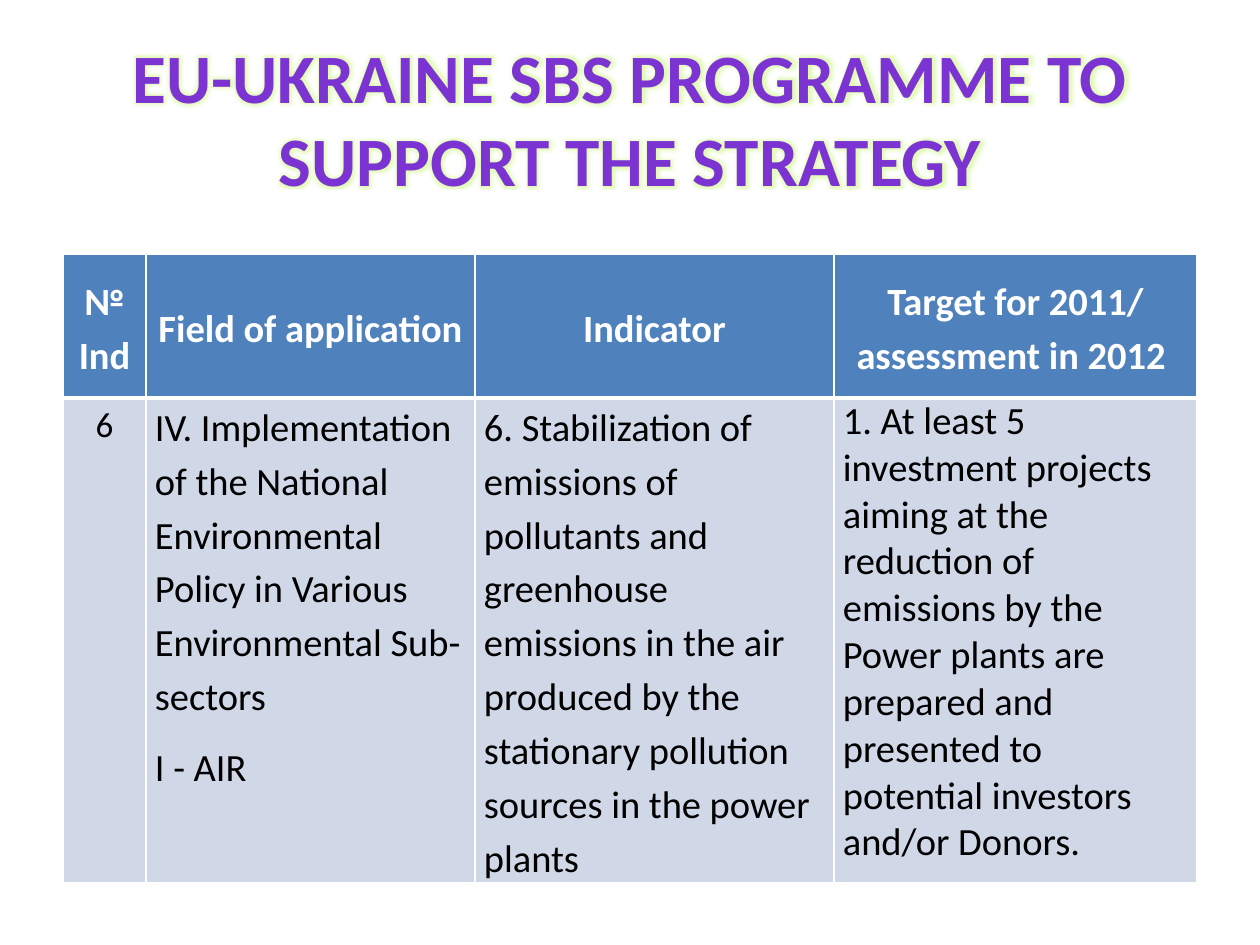
from lxml import etree
from pptx import Presentation
from pptx.dml.color import RGBColor
from pptx.enum.text import MSO_ANCHOR, PP_ALIGN
from pptx.oxml.ns import qn
from pptx.util import Emu, Pt

CENTER, LEFT = PP_ALIGN.CENTER, PP_ALIGN.LEFT
MIDDLE, TOP = MSO_ANCHOR.MIDDLE, MSO_ANCHOR.TOP

PURPLE = RGBColor(0x7B, 0x34, 0xD2)
OUTLINE = RGBColor(0x5E, 0x45, 0x7C)
GLOW = RGBColor(0xB8, 0xF0, 0x50)
BLUE = RGBColor(0x4F, 0x81, 0xBD)
PALE_BLUE = RGBColor(0xD0, 0xD8, 0xE8)
WHITE = RGBColor(0xFF, 0xFF, 0xFF)
BLACK = RGBColor(0x00, 0x00, 0x00)

FONT = "Calibri"
PX_PER_INCH = 126
COLUMNS = [83, 329, 359, 363]
ROWS = [144, 484]

HEADERS = ["№ Ind", "Field of application", "Indicator",
           "Target for 2011/ assessment in 2012 "]
# Paragraphs, alignment, text size, line spacing, space after
DETAILS = [
    (["6"], CENTER, 20, 1.15, 10),
    (["IV. Implementation of the National Environmental Policy in Various "
      "Environmental Sub-sectors", "І - AIR"], LEFT, 22, 1.15, 10),
    (["6. Stabilization of emissions of pollutants and greenhouse emissions in "
      "the air produced by the stationary pollution sources in the power plants"],
     LEFT, 22, 1.15, 10),
    (["1. At least 5 investment projects aiming at the reduction of emissions by "
      "the Power plants are prepared and presented to potential investors and/or "
      "Donors."], LEFT, 22, 1, 0),
]


def px(count):
    return Emu(round(count * 914400 / PX_PER_INCH))


def add_color(parent, color):
    fill = etree.SubElement(parent, qn("a:solidFill"))
    etree.SubElement(fill, qn("a:srgbClr"), val=str(color))


def add_span(para, text, size, color, bold):
    span = para.add_run()
    span.text = text
    span.font.name = FONT
    span.font.size = Pt(size)
    span.font.bold = bold
    span.font.color.rgb = color
    return span


def add_text_effects(span):
    """Give the letters a thin outline and a soft glow."""
    fill = span.font.fill._xPr.find(qn("a:solidFill"))
    line = etree.Element(qn("a:ln"), w=str(Pt(0.71)))
    add_color(line, OUTLINE)
    fill.addprevious(line)
    effects = etree.Element(qn("a:effectLst"))
    glow = etree.SubElement(effects, qn("a:glow"), rad=str(Pt(4)))
    color = etree.SubElement(glow, qn("a:srgbClr"), val=str(GLOW))
    etree.SubElement(color, qn("a:alpha"), val="40000")
    fill.addnext(effects)


def place_title(page, left, top, width, height):
    title = page.shapes.title
    title.left, title.top = px(left), px(top)
    title.width, title.height = px(width), px(height)
    frame = title.text_frame
    frame.word_wrap = True
    frame.vertical_anchor = MIDDLE
    para = frame.paragraphs[0]
    para.alignment = CENTER
    span = add_span(para, "EU-UKRAINE SBS PROGRAMME TO SUPPORT THE STRATEGY",
                    39.6, PURPLE, True)
    add_text_effects(span)


def set_borders(cell, bottom):
    properties = cell._tc.get_or_add_tcPr()
    sides = {"lnL": 1, "lnR": 1, "lnT": 1, "lnB": bottom}
    for index, (side, width) in enumerate(sides.items()):
        line = etree.Element(qn(f"a:{side}"), w=str(Pt(width)))
        add_color(line, WHITE)
        properties.insert(index, line)


def fill_cell(cell, texts, align, size, spacing, after, is_header):
    cell.margin_left = cell.margin_right = px(9)
    cell.margin_top = cell.margin_bottom = 0
    cell.vertical_anchor = MIDDLE if is_header else TOP
    cell.fill.solid()
    cell.fill.fore_color.rgb = BLUE if is_header else PALE_BLUE
    set_borders(cell, 3 if is_header else 1)
    frame = cell.text_frame
    for index, text in enumerate(texts):
        para = frame.add_paragraph() if index else frame.paragraphs[0]
        para.alignment = align
        para.line_spacing = spacing
        para.space_after = Pt(after)
        add_span(para, text, size, WHITE if is_header else BLACK, is_header)


def place_table(page, left, top):
    table = page.shapes.add_table(len(ROWS), len(COLUMNS), px(left), px(top),
                                  px(sum(COLUMNS)), px(sum(ROWS))).table
    for column, width in zip(table.columns, COLUMNS):
        column.width = px(width)
    for row, height in zip(table.rows, ROWS):
        row.height = px(height)
    for index, (header, detail) in enumerate(zip(HEADERS, DETAILS)):
        fill_cell(table.cell(0, index), [header], CENTER, 22, 1.15, 10, True)
        fill_cell(table.cell(1, index), *detail, False)


def main():
    deck = Presentation()
    deck.slide_width, deck.slide_height = px(1260), px(945)
    page = deck.slides.add_slide(deck.slide_layouts[5])
    place_title(page, 63, 38, 1134, 158)
    place_table(page, 63, 254)
    deck.save("out.pptx")


if __name__ == "__main__":
    main()
